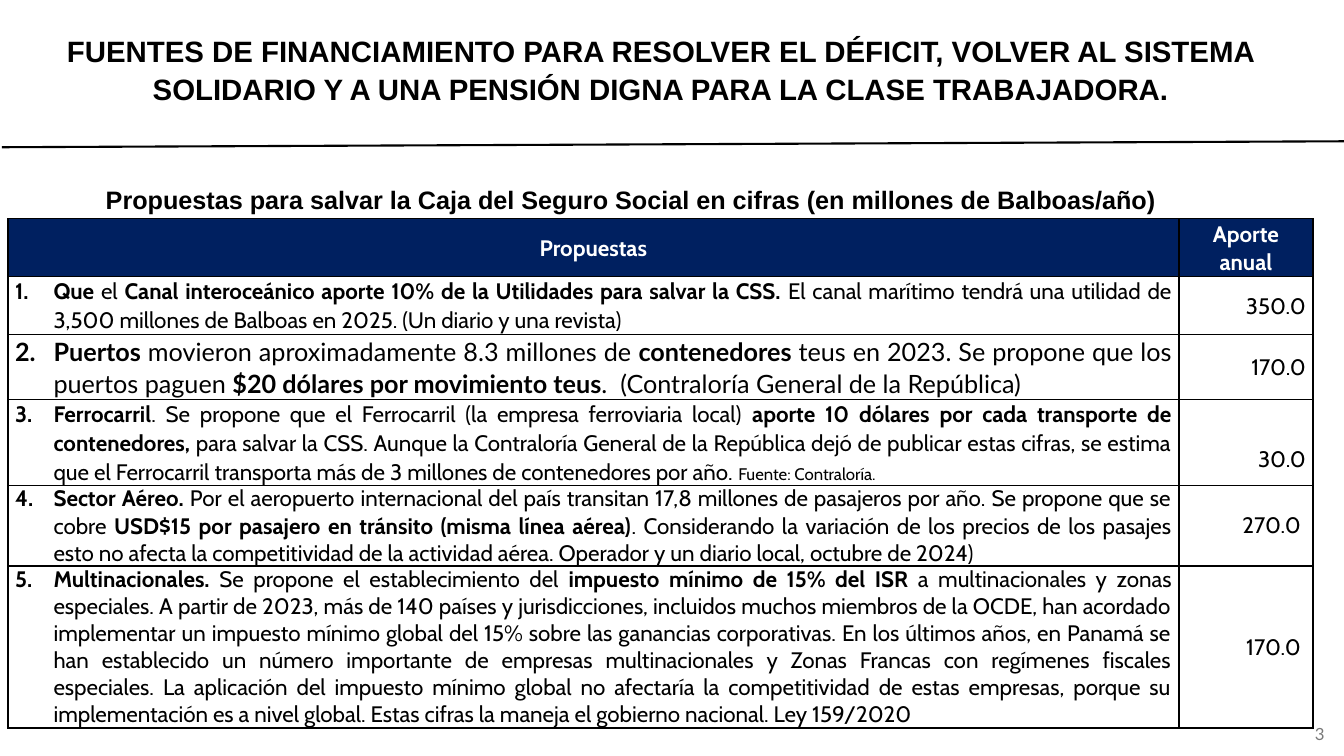
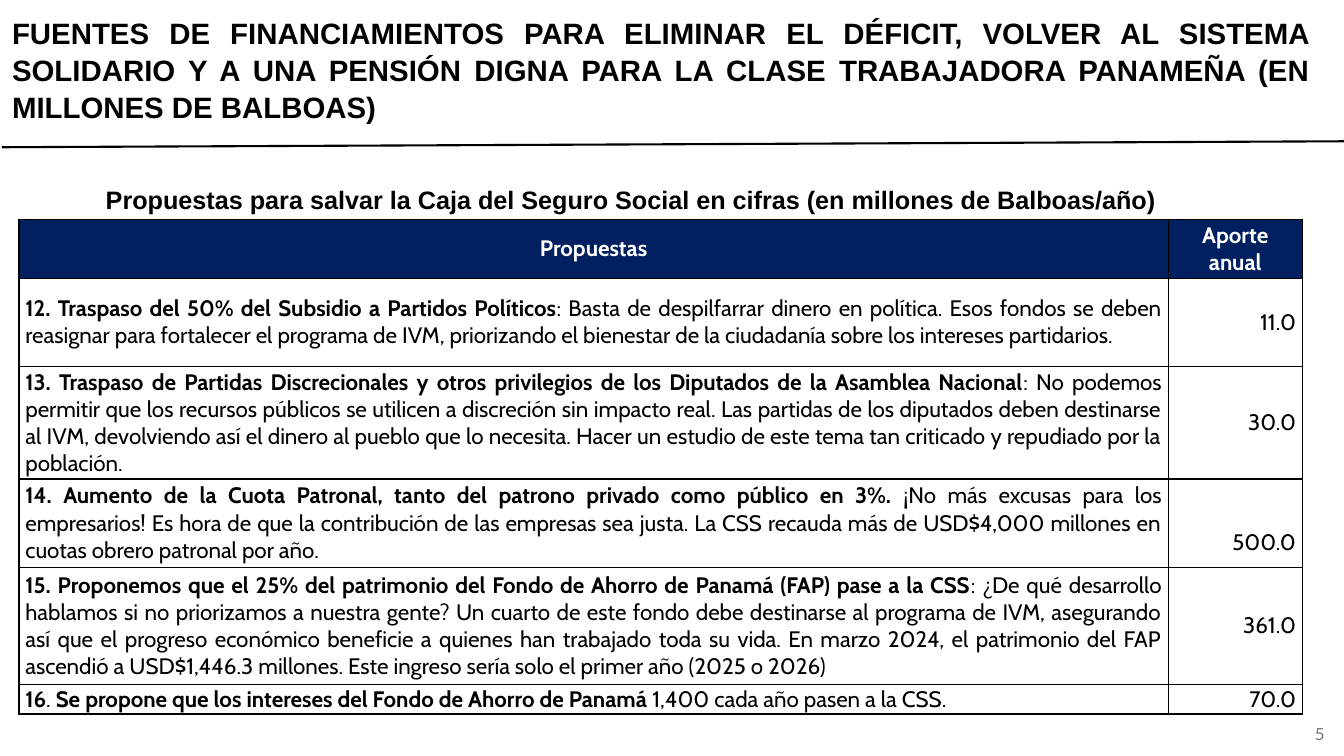
from pptx import Presentation
from pptx.dml.color import RGBColor
from pptx.enum import shapes as sh, text as tx
from pptx.oxml import parse_xml
from pptx.oxml.ns import nsdecls
from pptx.util import Cm, Pt

BLACK, WHITE, NAVY, GRAY = "000000", "FFFFFF", "002060", "797979"
LEFT, MID, RIGHT, JUST = (tx.PP_ALIGN.LEFT, tx.PP_ALIGN.CENTER,
                          tx.PP_ALIGN.RIGHT, tx.PP_ALIGN.JUSTIFY)
CAPTION = ("Propuestas para salvar la Caja del Seguro Social en cifras "
           "(en millones de Balboas/año)")
HEADS = ("Propuestas", "Aporte anual")

# Text between ** marks is bold. "drop" lowers a value, "inset" moves it left.
SLIDES = [
    dict(
        title="FUENTES DE FINANCIAMIENTO PARA RESOLVER EL DÉFICIT, VOLVER AL SISTEMA "
              "SOLIDARIO Y A UNA PENSIÓN DIGNA PARA LA CLASE TRABAJADORA.",
        align=MID, page="3", left=0.2, top=5.51, cols=(29.51, 3.38), pad=0.18,
        head=1.44, lead=1.07, listed=True,
        rows=[
            dict(high=1.46, value="350.0", lead=1.07, text=(
                "**Que** el **Canal interoceánico aporte 10% de la Utilidades para salvar la "
                "CSS. **El canal marítimo tendrá una utilidad de 3,500 millones de Balboas "
                "en 2025. (Un diario y una revista)")),
            dict(high=1.64, value="170.0", lead=1.07, font="Lato", size=18, text=(
                "**Puertos** movieron aproximadamente 8.3 millones de **contenedores** teus "
                "en 2023. Se propone que los puertos paguen **$20 dólares por movimiento "
                "teus**.  (Contraloría General de la República)")),
            dict(high=2.17, value="30.0", lead=1.07, drop=0.81,
                 note="Fuente: Contraloría.", text=(
                "**Ferrocarril**. Se propone que el Ferrocarril (la empresa ferroviaria "
                "local) **aporte 10 dólares por cada transporte de contenedores,** para "
                "salvar la CSS. Aunque la Contraloría General de la República dejó de "
                "publicar estas cifras, se estima que el Ferrocarril transporta más de 3 "
                "millones de contenedores por año. ")),
            dict(high=2.02, value="270.0", inset=0.13, text=(
                "**Sector Aéreo. **Por el aeropuerto internacional del país transitan 17,8 "
                "millones de pasajeros por año. Se propone que se cobre** USD$15 por pasajero "
                "en tránsito (misma línea aérea)**. Considerando la variación de los precios "
                "de los pasajes esto no afecta la competitividad de la actividad aérea. "
                "Operador y un diario local, octubre de 2024)")),
            dict(high=4.08, value="170.0", inset=0.13, text=(
                "**Multinacionales.** Se propone el establecimiento del **impuesto mínimo de "
                "15% del ISR **a multinacionales y zonas especiales. A partir de 2023, más de "
                "140 países y jurisdicciones, incluidos muchos miembros de la OCDE, han "
                "acordado implementar un impuesto mínimo global del 15% sobre las ganancias "
                "corporativas. En los últimos años, en Panamá se han establecido un número "
                "importante de empresas multinacionales y Zonas Francas con regímenes fiscales "
                "especiales. La aplicación del impuesto mínimo global no afectaría la "
                "competitividad de estas empresas, porque su implementación es a nivel global. "
                "Estas cifras la maneja el gobierno nacional. Ley 159/2020")),
        ]),
    dict(
        title="FUENTES DE FINANCIAMIENTOS PARA ELIMINAR EL DÉFICIT, VOLVER AL SISTEMA "
              "SOLIDARIO Y A UNA PENSIÓN DIGNA PARA LA CLASE TRABAJADORA PANAMEÑA (EN "
              "MILLONES DE BALBOAS)",
        align=JUST, page="5", left=0.48, top=5.53, cols=(28.96, 3.38), pad=0.16,
        head=1.48, lead=1, listed=False,
        rows=[
            dict(high=2.22, value="11.0", text=(
                "**12. Traspaso del 50% del Subsidio a Partidos Políticos**: Basta de "
                "despilfarrar dinero en política. Esos fondos se deben reasignar para "
                "fortalecer el programa de IVM, priorizando el bienestar de la ciudadanía "
                "sobre los intereses partidarios.")),
            dict(high=2.84, value="30.0", text=(
                "**13. Traspaso de Partidas Discrecionales y otros privilegios de los "
                "Diputados de la Asamblea Nacional**: No podemos permitir que los recursos "
                "públicos se utilicen a discreción sin impacto real. Las partidas de los "
                "diputados deben destinarse al IVM, devolviendo así el dinero al pueblo que "
                "lo necesita. Hacer un estudio de este tema tan criticado y repudiado por la "
                "población.")),
            dict(high=2.22, value="500.0", drop=0.96, text=(
                "**14. Aumento de la Cuota Patronal, tanto del patrono privado como público "
                "en 3%. **¡No más excusas para los empresarios! Es hora de que la "
                "contribución de las empresas sea justa. La CSS recauda más de USD$4,000 "
                "millones en cuotas obrero patronal por año.")),
            dict(high=2.95, value="361.0", text=(
                "**15. Proponemos que el 25% del patrimonio del Fondo de Ahorro de Panamá "
                "(FAP) pase a la CSS**: ¿De qué desarrollo hablamos si no priorizamos a "
                "nuestra gente? Un cuarto de este fondo debe destinarse al programa de IVM, "
                "asegurando así que el progreso económico beneficie a quienes han trabajado "
                "toda su vida. En marzo 2024, el patrimonio del FAP ascendió a USD$1,446.3 "
                "millones. Este ingreso sería solo el primer año (2025 o 2026)")),
            dict(high=0.75, value="70.0", text=(
                "**16**. **Se propone que los intereses del Fondo de Ahorro de Panamá** "
                "1,400 cada año pasen a la CSS.")),
        ]),
]


def rgb(code):
    return RGBColor.from_string(code)


def write(frame, words, font="Cabin", size=16, color=BLACK, bold=False,
          align=LEFT, lead=1, note=""):
    """Fill the frame's first paragraph; ** toggles bold, note follows in 12 pt."""
    frame.word_wrap = True
    para = frame.paragraphs[0]
    para.alignment, para.line_spacing = align, lead
    parts = [(part, size, bold != bool(i % 2))
             for i, part in enumerate(words.split("**"))]
    for part, pts, heavy in parts + [(note, 12, False)]:
        if part:
            run = para.add_run()
            run.text = part
            run.font.name, run.font.size, run.font.bold = font, Pt(pts), heavy
            run.font.color.rgb = rgb(color)
    return para


def number(para, start):
    props = para._p.get_or_add_pPr()
    props.set("marL", str(Cm(0.97)))
    props.set("indent", str(-Cm(0.97)))
    props.append(parse_xml(
        f'<a:buAutoNum {nsdecls("a")} type="arabicPeriod" startAt="{start}"/>'))


def style(cell, pad, fill=None, drop=0, inset=0):
    """Set margins, fill and black borders of a cell."""
    cell.vertical_anchor = tx.MSO_ANCHOR.MIDDLE
    cell.margin_left, cell.margin_right = Cm(pad), Cm(pad + inset)
    cell.margin_top, cell.margin_bottom = Cm(drop), 0
    if fill:
        cell.fill.solid()
        cell.fill.fore_color.rgb = rgb(fill)
    else:
        cell.fill.background()
    props = cell._tc.get_or_add_tcPr()
    for i, side in enumerate("LRTB"):
        props.insert(i, parse_xml(
            f'<a:ln{side} {nsdecls("a")} w="{Pt(1)}"><a:solidFill>'
            f'<a:srgbClr val="{BLACK}"/></a:solidFill></a:ln{side}>'))


def frame(slide, data):
    """Add the title, rule, caption and page number."""
    title = slide.shapes.title
    title.left, title.top, title.width, title.height = map(Cm, (0.05, 0.25, 33.2, 2.97))
    title.text_frame.auto_size = tx.MSO_AUTO_SIZE.NONE
    title.text_frame.vertical_anchor = tx.MSO_ANCHOR.MIDDLE
    write(title.text_frame, data["title"], font="Arial", size=21, bold=True,
          align=data["align"], lead=1.05)
    rule = slide.shapes.add_connector(
        sh.MSO_CONNECTOR.STRAIGHT, Cm(0.05), Cm(3.71), Cm(33.87), Cm(3.56))
    rule.line.color.rgb, rule.line.width = rgb(BLACK), Pt(1.5)
    rule._element.spPr.append(parse_xml(f'<a:effectLst {nsdecls("a")}/>'))
    page = slide.shapes.add_textbox(Cm(32.36), Cm(17.98), Cm(1.27), Cm(1.02))
    page.text_frame.vertical_anchor = tx.MSO_ANCHOR.MIDDLE
    write(page.text_frame, data["page"], font="Lato", size=12, color=GRAY, align=RIGHT)
    label = slide.shapes.add_textbox(Cm(0.05), Cm(4.52), Cm(31.7), Cm(1.02))
    write(label.text_frame, CAPTION, font="Arial", size=18, bold=True, align=MID)


def grid(slide, data):
    """Add the table of proposals."""
    rows, cols, pad = data["rows"], data["cols"], data["pad"]
    highs = [data["head"]] + [row["high"] for row in rows]
    table = slide.shapes.add_table(
        len(highs), len(cols), Cm(data["left"]), Cm(data["top"]),
        Cm(sum(cols)), Cm(sum(highs))).table
    table.first_row = table.horz_banding = False
    for col, wide in zip(table.columns, cols):
        col.width = Cm(wide)
    for line, high in zip(table.rows, highs):
        line.height = Cm(high)
    for i, head in enumerate(HEADS):
        cell = table.cell(0, i)
        style(cell, pad, fill=NAVY)
        write(cell.text_frame, head, color=WHITE, bold=True, align=MID, lead=data["lead"])
    for i, row in enumerate(rows, 1):
        lead = row.get("lead", 1)
        item, value = table.cell(i, 0), table.cell(i, 1)
        style(item, pad)
        para = write(item.text_frame, row["text"], font=row.get("font", "Cabin"),
                     size=row.get("size", 16), align=JUST, lead=lead,
                     note=row.get("note", ""))
        if data["listed"]:
            number(para, i)
        style(value, pad, drop=row.get("drop", 0), inset=row.get("inset", 0))
        write(value.text_frame, row["value"], align=RIGHT, lead=lead)


def main():
    deck = Presentation()
    deck.slide_width, deck.slide_height = Cm(33.87), Cm(19.05)
    for data in SLIDES:
        slide = deck.slides.add_slide(deck.slide_layouts[5])
        frame(slide, data)
        grid(slide, data)
    deck.save("out.pptx")


if __name__ == "__main__":
    main()
